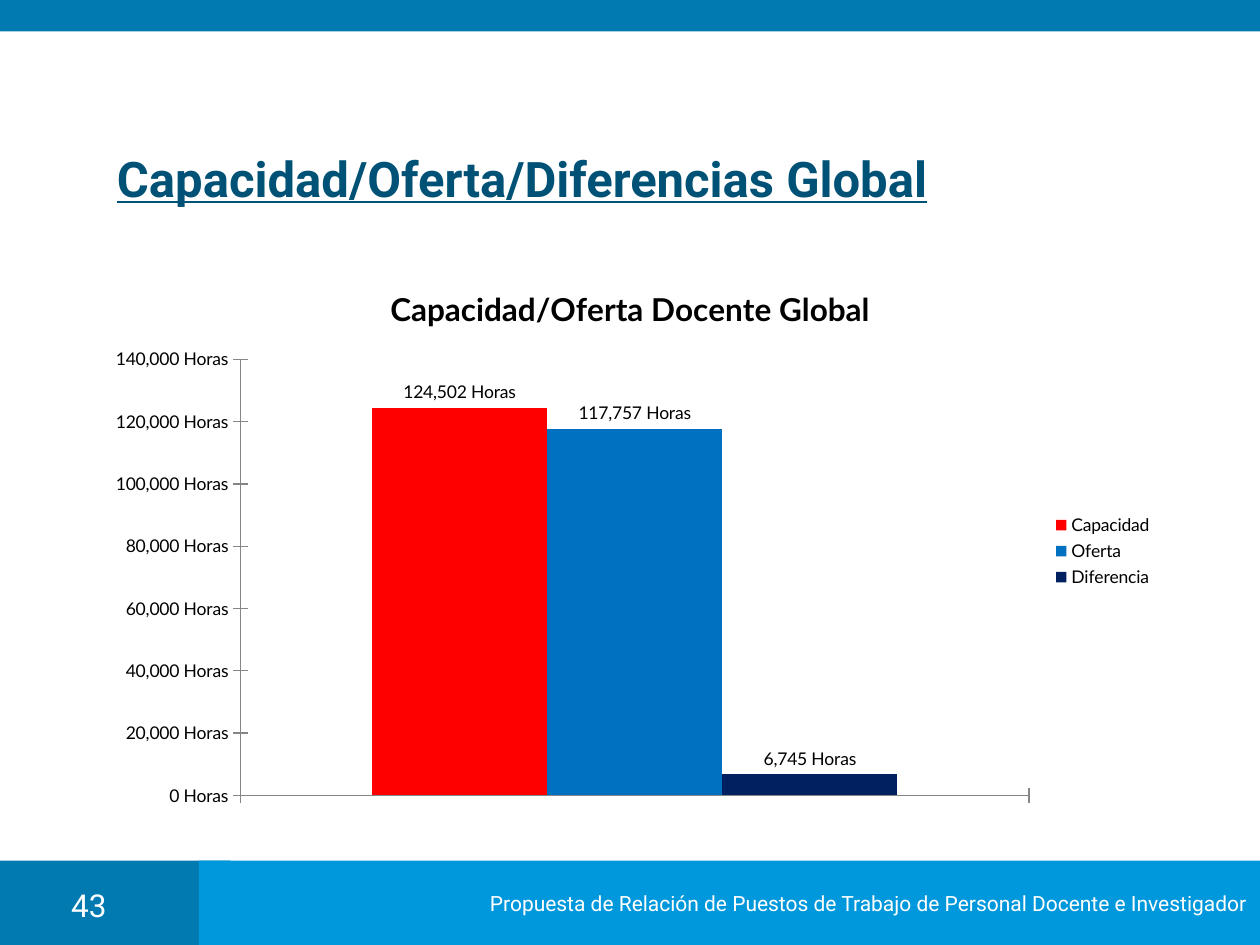
from pptx import Presentation
from pptx.chart.data import CategoryChartData
from pptx.dml.color import RGBColor
from pptx.enum.chart import XL_CHART_TYPE as ChartType
from pptx.enum.chart import XL_LABEL_POSITION as LabelPos
from pptx.enum.chart import XL_LEGEND_POSITION as LegendPos
from pptx.enum.chart import XL_TICK_MARK as Tick
from pptx.enum.shapes import MSO_SHAPE as Shape
from pptx.enum.text import MSO_ANCHOR as Anchor
from pptx.enum.text import PP_ALIGN as Align
from pptx.util import Inches, Pt

COLORS = {
    "dark": "007AB1", "light": "0098DC", "title": "005176",
    "white": "FFFFFF", "black": "000000", "axis": "868686",
    "Capacidad": "FF0000", "Oferta": "0070C0", "Diferencia": "002060",
}
HOURS = {"Capacidad": 124502, "Oferta": 117757, "Diferencia": 6745}
HOURS_FORMAT = '#,##0\\ "Horas"'
WIDTH, HEIGHT = 10, 7.5
FOOTER_TOP, FOOTER_HEIGHT = 6.83, 0.67


class SlideBuilder:
    """Draws on one slide; every box is (left, top, width, height) in one-inch columns and rows."""

    text_font = "Roboto"
    chart_font = "Lato"

    def __init__(self, slide):
        self.slide = slide

    def color(self, name):
        return RGBColor.from_string(COLORS[name])

    def place(self, box):
        return [Inches(length) for length in box]

    def style(self, font, face, size, color, bold=False, underline=False):
        font.name, font.size = face, Pt(size)
        font.bold, font.underline = bold, underline
        font.color.rgb = self.color(color)

    def set_text(self, frame, text, size, color, align=Align.LEFT,
                 anchor=Anchor.MIDDLE, wrap=True, **emphasis):
        frame.text = text
        frame.word_wrap = wrap
        frame.vertical_anchor = anchor
        line = frame.paragraphs[0]
        line.alignment = align
        self.style(line.runs[0].font, self.text_font, size, color, **emphasis)

    def band(self, box, color):
        band = self.slide.shapes.add_shape(Shape.RECTANGLE, *self.place(box))
        band.shadow.inherit = False
        band.fill.solid()
        band.fill.fore_color.rgb = self.color(color)
        band.line.fill.background()
        return band

    def label(self, box, text, size, color, **layout):
        label = self.slide.shapes.add_textbox(*self.place(box))
        self.set_text(label.text_frame, text, size, color, **layout)

    def column_chart(self, box, title, values, number_format):
        data = CategoryChartData()
        data.categories = [" "]
        for name, value in values.items():
            data.add_series(name, [value])
        chart = self.slide.shapes.add_chart(
            ChartType.COLUMN_CLUSTERED, *self.place(box), data).chart
        self.style(chart.font, self.chart_font, 10, "black")

        chart.has_title = True
        chart.chart_title.text_frame.text = title
        heading = chart.chart_title.text_frame.paragraphs[0].runs[0]
        self.style(heading.font, self.chart_font, 18, "black", bold=True)
        chart.chart_title.include_in_layout = False

        chart.has_legend = True
        chart.legend.position = LegendPos.RIGHT
        chart.legend.include_in_layout = False

        for axis in (chart.category_axis, chart.value_axis):
            axis.has_major_gridlines = False
            axis.major_tick_mark = Tick.CROSS
            axis.format.line.color.rgb = self.color("axis")
            axis.format.line.width = Pt(0.75)
        ticks = chart.value_axis.tick_labels
        ticks.number_format, ticks.number_format_is_linked = number_format, False

        plot = chart.plots[0]
        plot.vary_by_categories = False
        plot.gap_width, plot.overlap = 150, 0
        for series in plot.series:
            series.format.fill.solid()
            series.format.fill.fore_color.rgb = self.color(series.name)
            labels = series.data_labels
            labels.show_value = True
            labels.position = LabelPos.OUTSIDE_END
            labels.number_format, labels.number_format_is_linked = number_format, False


def main():
    deck = Presentation()
    deck.slide_width, deck.slide_height = Inches(WIDTH), Inches(HEIGHT)
    page = SlideBuilder(deck.slides.add_slide(deck.slide_layouts[6]))

    page.band((0, FOOTER_TOP, 1.83, FOOTER_HEIGHT), "dark")
    footer = page.band((1.58, FOOTER_TOP, WIDTH - 1.58, FOOTER_HEIGHT), "light")
    page.set_text(
        footer.text_frame,
        "Propuesta de Relación de Puestos de Trabajo de Personal Docente e Investigador",
        12, "white", align=Align.RIGHT, wrap=False)
    page.band((0, 0, WIDTH, 0.25), "dark")

    page.label((0.83, 1.2, 8.35, 0.42), "Capacidad/Oferta/Diferencias Global",
               28, "title", bold=True, underline=True)
    page.label((0.35, 6.98, 0.71, 0.32), "43", 18, "white",
               align=Align.CENTER, anchor=Anchor.TOP)
    page.column_chart((0.75, 2.08, 8.5, 4.59), "Capacidad/Oferta Docente Global",
                      HOURS, HOURS_FORMAT)
    deck.save("out.pptx")


if __name__ == "__main__":
    main()
